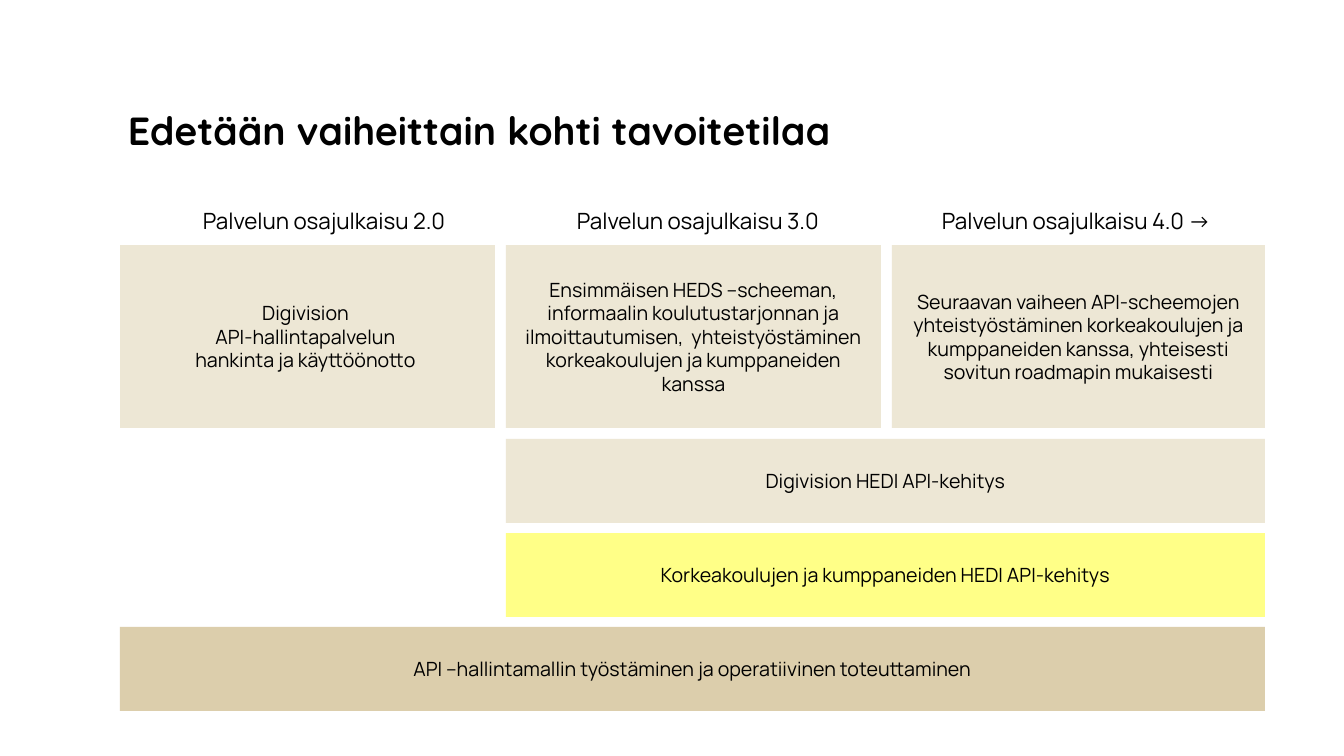
"""Build the slide on the stepwise path to the target state."""
from pptx import Presentation
from pptx.dml.color import RGBColor
from pptx.enum.shapes import MSO_SHAPE
from pptx.enum.text import MSO_ANCHOR, PP_ALIGN
from pptx.util import Pt

RECT = MSO_SHAPE.RECTANGLE
TOP, MIDDLE = MSO_ANCHOR.TOP, MSO_ANCHOR.MIDDLE
LEFT, CENTER = PP_ALIGN.LEFT, PP_ALIGN.CENTER
SCALE = 914400 / 100.8
COLORS = {"text": "000000", "sand": "EDE7D5", "tan": "DCCEAC", "yellow": "FFFF87"}


def px(n):
    return round(n * SCALE)


def add_text(text, x, y, w, h, fill=None, size=14, font="Manrope", bold=False, leading=1.0):
    area = [px(n) for n in (x, y, w, h)]
    if fill:
        shape = slide.shapes.add_shape(RECT, *area)
        shape.shadow.inherit = False
        shape.fill.solid()
        shape.fill.fore_color.rgb = RGBColor.from_string(COLORS[fill])
        shape.line.fill.background()
    else:
        shape = slide.shapes.add_textbox(*area)
    frame = shape.text_frame
    frame.word_wrap = True
    frame.vertical_anchor = MIDDLE if fill else TOP
    if not fill:
        frame.margin_left = frame.margin_right = 0
        frame.margin_top = frame.margin_bottom = 0
    frame.text = text
    for para in frame.paragraphs:
        para.alignment = CENTER if fill else LEFT
        para.line_spacing = leading
        para.font.size = Pt(size)
        para.font.name = font
        para.font.bold = bold
        para.font.color.rgb = RGBColor.from_string(COLORS["text"])


deck = Presentation()
deck.slide_width, deck.slide_height = px(1344), px(756)
slide = deck.slides.add_slide(deck.slide_layouts[6])

add_text("Edetään vaiheittain kohti tavoitetilaa", 128, 112, 1089, 95,
         size=28, font="Quicksand", bold=True, leading=0.9)

START, STEP, WIDTH = 120, 386, 375
END = 1265
phases = [
    ("Palvelun osajulkaisu 2.0", 203,
     "Digivision \nAPI-hallintapalvelun \nhankinta ja käyttöönotto "),
    ("Palvelun osajulkaisu 3.0", 577,
     "Ensimmäisen HEDS –scheeman, informaalin koulutustarjonnan ja "
     "ilmoittautumisen,  yhteistyöstäminen korkeakoulujen ja kumppaneiden kanssa"),
    ("Palvelun osajulkaisu 4.0 →", 942,
     "Seuraavan vaiheen API-scheemojen yhteistyöstäminen korkeakoulujen ja "
     "kumppaneiden kanssa, yhteisesti sovitun roadmapin mukaisesti"),
]
for i, (head, left, body) in enumerate(phases):
    add_text(head, left, 207, 270, 27, size=16)
    x = START + i * STEP
    add_text(body, x, 245, min(WIDTH, END - x), 183, fill="sand")

bars = [
    ("Digivision HEDI API-kehitys", 1, "sand"),
    ("Korkeakoulujen ja kumppaneiden HEDI API-kehitys", 1, "yellow"),
    ("API –hallintamallin työstäminen ja operatiivinen toteuttaminen", 0, "tan"),
]
for i, (text, col, fill) in enumerate(bars):
    x = START + col * STEP
    add_text(text, x, 439 + i * 94, END - x, 84, fill=fill)

deck.save("out.pptx")
